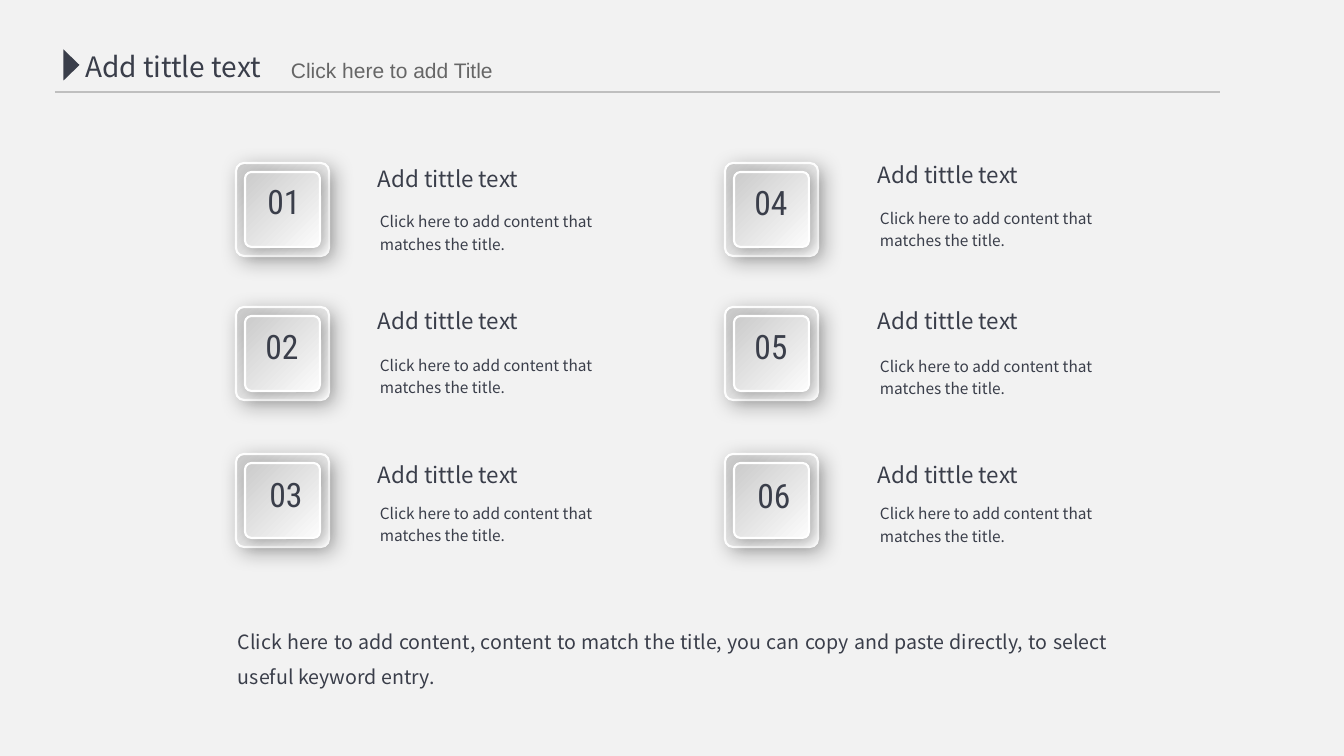
from dataclasses import dataclass

from lxml import etree
from pptx import Presentation
from pptx.dml.color import RGBColor
from pptx.enum.shapes import MSO_CONNECTOR, MSO_SHAPE
from pptx.enum.text import MSO_ANCHOR, MSO_AUTO_SIZE, PP_ALIGN
from pptx.oxml import parse_xml
from pptx.oxml.ns import nsdecls, qn
from pptx.util import Emu, Pt

LEFT, CENTER, JUSTIFY = PP_ALIGN.LEFT, PP_ALIGN.CENTER, PP_ALIGN.JUSTIFY
TOP, FIXED = MSO_ANCHOR.TOP, MSO_AUTO_SIZE.NONE
ROUND, ARROW = MSO_SHAPE.ROUNDED_RECTANGLE, MSO_SHAPE.ISOSCELES_TRIANGLE
STRAIGHT = MSO_CONNECTOR.STRAIGHT


@dataclass(frozen=True)
class Theme:
    """Colours, fonts and type sizes of the slide."""
    back: str = "F2F2F2"
    ink: str = "3A3E4A"
    gray: str = "666666"
    rule: str = "BFBFBF"
    edge: str = "FFFFFF"
    dark: str = "CCCCCC"
    light: str = "FCFCFC"
    shade: str = "000000"
    sans: str = "Noto Sans CJK SC"
    digit: str = "Roboto Condensed"
    plain: str = "Arial"
    title: int = 20
    sub: int = 15
    number: int = 24
    head: int = 16
    note: int = 11
    body: int = 14


T = Theme()
HEAD = "Add tittle text"
NOTE = "Click here to add content that matches the title."
BODY = ("Click here to add content, content to match the title, you can copy "
        "and paste directly, to select useful keyword entry.")
ROWS = (163, 307, 454)
COLS = ((236, 132), (725, 143))
ITEMS = (
    ("01", (3, 13), -3, 41),
    ("02", (1, 14), -5, 40),
    ("03", (5, 15), 2, 41),
    ("04", (1, 14), -7, 37),
    ("05", (1, 14), -5, 41),
    ("06", (4, 16), 2, 42),
)


def px(n):
    """Turn pixels into EMU."""
    return Emu(round(n * 914400 / 100.8))


def rgb(code):
    """Turn a hex code into a colour."""
    return RGBColor.from_string(code)


def write(shape, text, size, font=T.sans, color=T.ink, align=LEFT, space=1.0):
    """Fill a shape with one styled paragraph."""
    frame = shape.text_frame
    frame.text = text
    frame.word_wrap = True
    frame.auto_size = FIXED
    frame.vertical_anchor = TOP
    para = frame.paragraphs[0]
    para.alignment = align
    para.line_spacing = space
    para.font.size = Pt(size)
    para.font.name = font
    para.font.color.rgb = rgb(color)


def label(shapes, box, text, size, **style):
    """Add a text box."""
    write(shapes.add_textbox(*map(px, box)), text, size, **style)


def plate(shapes, box, blur, dist):
    """Add a shaded rounded square with a soft shadow."""
    shape = shapes.add_shape(ROUND, *map(px, box))
    shape.adjustments[0] = 0.087
    shape.fill.gradient()
    shape.fill.gradient_angle = 315
    for stop, code, at in zip(shape.fill.gradient_stops, (T.dark, T.light), (0.01, 1)):
        stop.color.rgb = rgb(code)
        stop.position = at
    shape.line.color.rgb = rgb(T.edge)
    shape.line.width = Pt(1.5)
    shape._element.spPr.append(parse_xml(
        f'<a:effectLst {nsdecls("a")}><a:outerShdw blurRad="{Pt(blur)}" dist="{Pt(dist)}" '
        f'dir="2700000" algn="tl" rotWithShape="0"><a:srgbClr val="{T.shade}">'
        '<a:alpha val="30000"/></a:srgbClr></a:outerShdw></a:effectLst>'))


def tile(slide, x, y, number, shift):
    """Place a numbered double tile."""
    shapes = slide.shapes.add_group_shape().shapes
    plate(shapes, (x, y, 93, 93), 15, 5)
    plate(shapes, (x + 9, y + 9, 75, 75), 11, 3)
    dx, dy = shift
    label(shapes, (x + dx, y + dy, 90, 50), number, T.number, font=T.digit, align=CENTER)


def entry(slide, x, head, note):
    """Place a heading with its note."""
    shapes = slide.shapes.add_group_shape().shapes
    label(shapes, (x, head, 256, 37), HEAD, T.head)
    label(shapes, (x + 2, note, 236, 53), NOTE, T.note, space=1.2)


def header(slide, x, y, width):
    """Place the title, its marker, the subtitle and the rule."""
    title = slide.shapes.title
    title.left, title.top, title.width, title.height = map(px, (x + 20, y, 216, 44))
    write(title, HEAD, T.title)
    mark = slide.shapes.add_shape(ARROW, *map(px, (x + 1, y + 13, 31, 16)))
    mark.rotation = 90
    mark.shadow.inherit = False
    mark.fill.solid()
    mark.fill.fore_color.rgb = rgb(T.ink)
    mark.line.fill.background()
    label(slide.shapes, (x + 226, y + 9, 273, 35), "Click here to add Title",
          T.sub, font=T.plain, color=T.gray)
    rule = slide.shapes.add_connector(
        STRAIGHT, *map(px, (x, y + 48, x + width, y + 48)))
    rule.line.color.rgb = rgb(T.rule)
    rule.line.width = Pt(0.75)
    etree.SubElement(rule._element.spPr, qn("a:effectLst"))


def grid(slide):
    """Place the six entries column by column."""
    spots = [(x, gap, y) for x, gap in COLS for y in ROWS]
    for (x, gap, y), (number, shift, head, note) in zip(spots, ITEMS):
        tile(slide, x, y, number, shift)
        entry(slide, x + gap, y + head, y + note)


def main():
    """Build and save the slide."""
    deck = Presentation()
    deck.slide_width, deck.slide_height = px(1344), px(756)
    slide = deck.slides.add_slide(deck.slide_layouts[5])
    slide.background.fill.solid()
    slide.background.fill.fore_color.rgb = rgb(T.back)
    header(slide, 55, 44, 1165)
    grid(slide)
    label(slide.shapes, (228, 613, 890, 78), BODY, T.body, align=JUSTIFY, space=1.5)
    deck.save("out.pptx")


if __name__ == "__main__":
    main()
